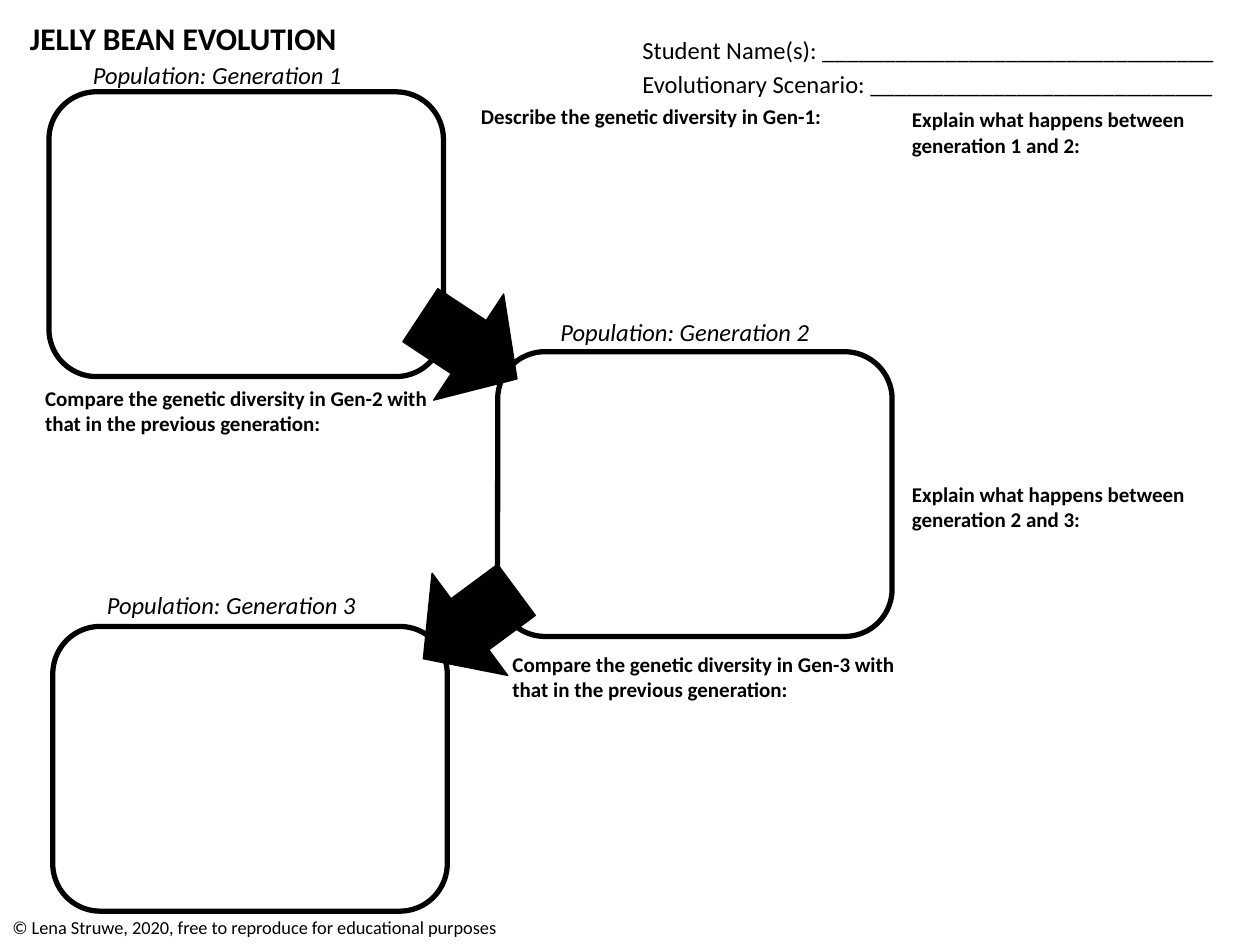
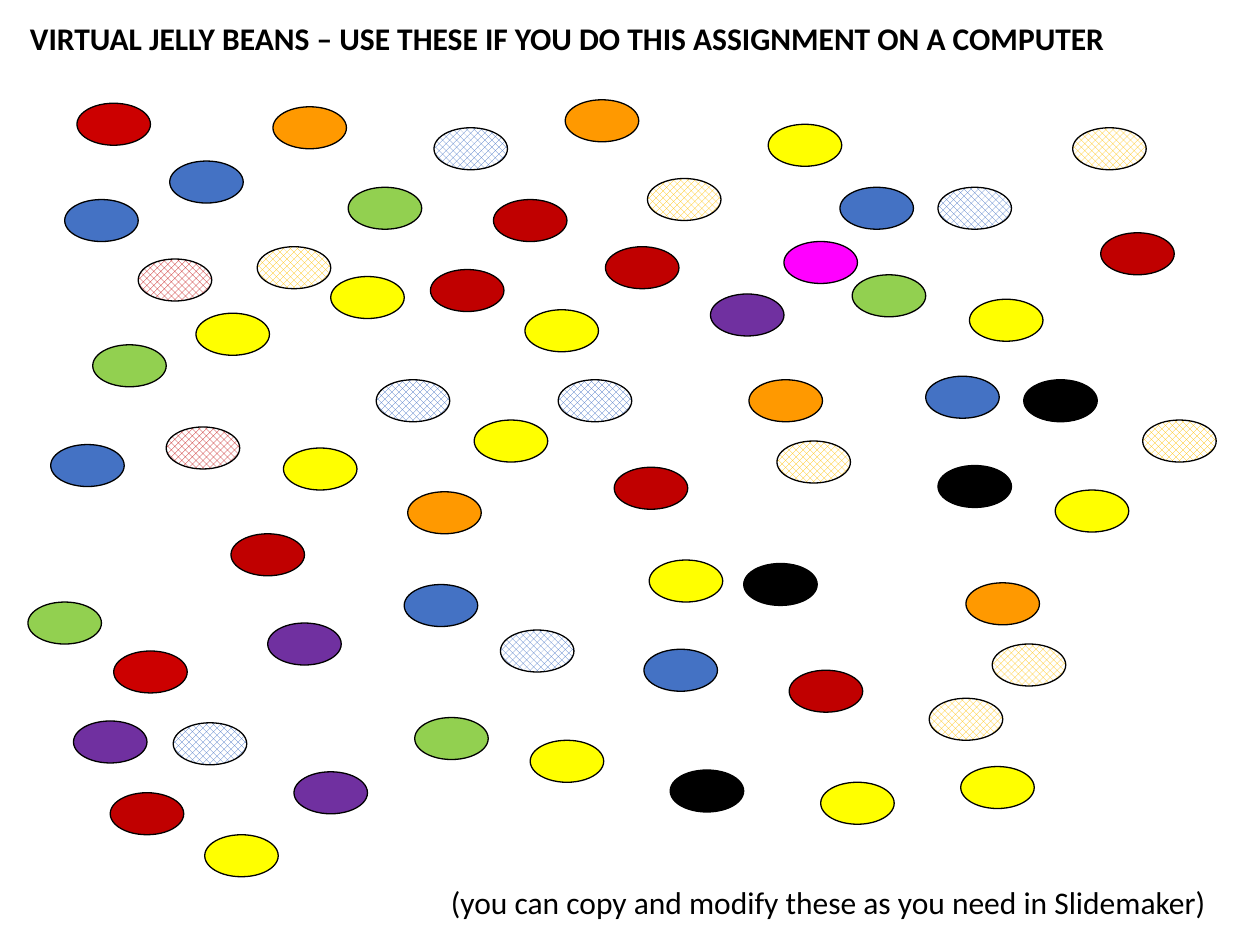
import pptx
import pptx.dml.color
import pptx.enum.dml
import pptx.enum.shapes
import pptx.enum.text
import pptx.util

Pt = pptx.util.Pt
RGBColor = pptx.dml.color.RGBColor
SHAPE = pptx.enum.shapes.MSO_SHAPE

BLACK = RGBColor(0x00, 0x00, 0x00)
WHITE = RGBColor(0xFF, 0xFF, 0xFF)
CHERRY = RGBColor(0xCC, 0x00, 0x00)
RED = RGBColor(0xC0, 0x00, 0x00)
ORANGE = RGBColor(0xFF, 0x99, 0x00)
GOLD = RGBColor(0xFF, 0xC0, 0x00)
YELLOW = RGBColor(0xFF, 0xFF, 0x00)
GREEN = RGBColor(0x92, 0xD0, 0x50)
BLUE = RGBColor(0x44, 0x72, 0xC4)
PURPLE = RGBColor(0x70, 0x30, 0xA0)
PINK = RGBColor(0xFF, 0x00, 0xFF)

FONT = "Calibri"
PAGE_WIDTH, PAGE_HEIGHT = 720, 540
FULL_PAGE = (0, 0, PAGE_WIDTH, PAGE_HEIGHT)
POPULATION_SIZE = (225.4, 162.7)
BEAN_SIZE = (42, 24)

PLAIN_BEANS = [
    (CHERRY, [(44, 59), (65, 372)]),
    (RED, [(629, 133), (351, 267), (346, 141), (63, 453),
           (132, 305), (451, 383), (282, 114), (246, 154)]),
    (ORANGE, [(156, 61), (428, 217), (233, 281), (323, 57), (552, 333)]),
    (BLUE, [(97, 92), (37, 114), (231, 334), (480, 107),
            (529, 215), (368, 371), (29, 254)]),
    (GREEN, [(199, 107), (53, 197), (237, 410), (487, 157), (16, 344)]),
    (YELLOW, [(162, 256), (371, 320), (271, 240), (117, 477), (439, 71),
              (549, 438), (112, 179), (303, 423), (554, 171), (603, 280),
              (469, 447), (300, 177), (189, 158)]),
    (PURPLE, [(168, 441), (42, 412), (153, 356), (406, 168)]),
    (BLACK, [(425, 322), (585, 217), (536, 266), (383, 440)]),
    (PINK, [(448, 138)]),
]
CHECKED_BEANS = [
    (GOLD, [(147, 141), (653, 240), (444, 252), (613, 73),
            (370, 102), (531, 399), (567, 368)]),
    (BLUE, [(319, 217), (99, 413), (286, 360), (536, 107),
            (248, 73), (215, 217)]),
    (RED, [(79, 148), (95, 244)]),
]


def add_text(page, box, text, size, bold=False, italic=False, wrap=False):
    """Place one line or wrapped paragraph of black text in the box."""
    frame = page.shapes.add_textbox(*map(Pt, box)).text_frame
    frame.word_wrap = wrap
    frame.auto_size = pptx.enum.text.MSO_AUTO_SIZE.SHAPE_TO_FIT_TEXT
    span = frame.paragraphs[0].add_run()
    span.text = text
    span.font.name = FONT
    span.font.size = Pt(size)
    span.font.bold = bold
    span.font.italic = italic
    span.font.color.rgb = BLACK


def add_outlined(page, kind, box, color, line_width=0.75, checked=False):
    """Draw a black-outlined shape with a solid or checked fill."""
    shape = page.shapes.add_shape(kind, *map(Pt, box))
    shape.shadow.inherit = False
    if checked:
        shape.fill.patterned()
        shape.fill.pattern = pptx.enum.dml.MSO_PATTERN.LARGE_CHECKER_BOARD
        shape.fill.fore_color.rgb = color
        shape.fill.back_color.rgb = WHITE
    else:
        shape.fill.solid()
        shape.fill.fore_color.rgb = color
    shape.line.color.rgb = BLACK
    shape.line.width = Pt(line_width)
    return shape


def add_page(deck, title, title_width):
    """Add a blank page with the shared title style."""
    page = deck.slides.add_slide(deck.slide_layouts[6])
    add_text(page, (10, 7.2, title_width, 28.8), title, 18, bold=True)
    return page


def add_population(page, box, generation, label_shift):
    """Draw a population frame with its label above the top edge."""
    left, top, width, height = box
    add_outlined(page, SHAPE.ROUNDED_RECTANGLE, box, WHITE, 3)
    shift_x, shift_y = label_shift
    add_text(page, (left + shift_x, top + shift_y, 158.4, 24.2),
             f"Population: Generation {generation}", 14, italic=True)


def add_student_lines(page, box):
    """Write the two fill-in lines of the header."""
    left, top, width, height = box
    lines = ["Student Name(s): " + "_" * 32,
             "Evolutionary Scenario: " + "_" * 28]
    for row, text in enumerate(lines):
        line_box = (left, top + row * height / 2, width, 24.2)
        add_text(page, line_box, text, 14)


def add_questions(page, box):
    """Write the bold questions about diversity and change."""
    left, top, width, height = box
    add_text(page, (left + 267.8, top + 55.4, 211.7, 21.8),
             "Describe the genetic diversity in Gen-1:", 12, bold=True)
    for generation, explain_y, compare_x, compare_y in [
            (2, 57.6, 18.7, 216.7), (3, 271.4, 285.8, 368.6)]:
        add_text(page, (left + 514, top + explain_y, 186.5, 36),
                 "Explain what happens between generation "
                 f"{generation - 1} and {generation}:",
                 12, bold=True, wrap=True)
        add_text(page, (left + compare_x, top + compare_y, 249, 36),
                 f"Compare the genetic diversity in Gen-{generation} "
                 "with that in the previous generation:",
                 12, bold=True, wrap=True)


def add_worksheet(deck):
    """Build the worksheet that follows three generations."""
    page = add_page(deck, "JELLY BEAN EVOLUTION", 195.8)
    populations = [((28, 52.5), (18, -21.5)),
                   ((284.4, 201), (28.8, -23.2)),
                   ((30.2, 358), (23.8, -24.6))]
    for generation, (corner, label_shift) in enumerate(populations, 1):
        add_population(page, corner + POPULATION_SIZE, generation, label_shift)
    for left, top, angle in [(234.7, 162, 33.4), (235.4, 320.4, 143.5)]:
        arrow = add_outlined(page, SHAPE.RIGHT_ARROW,
                             (left, top, 66.2, 72.7), BLACK)
        arrow.rotation = angle
    add_student_lines(page, (360, 16.5, 344.2, 39))
    add_questions(page, FULL_PAGE)
    add_text(page, (0, 520, 296.6, 20),
             "© Lena Struwe, 2020, free to reproduce for educational purposes",
             10.5)


def add_beans(page, box, groups, checked):
    """Scatter the beans of each colour over the box."""
    left, top, width, height = box
    for color, corners in groups:
        for x, y in corners:
            add_outlined(page, SHAPE.OVAL, (left + x, top + y) + BEAN_SIZE,
                         color, checked=checked)


def add_bean_supply(deck):
    """Build the page of loose beans."""
    page = add_page(
        deck,
        "VIRTUAL JELLY BEANS – USE THESE IF YOU DO THIS ASSIGNMENT ON A COMPUTER",
        635)
    add_beans(page, FULL_PAGE, PLAIN_BEANS, False)
    add_beans(page, FULL_PAGE, CHECKED_BEANS, True)
    add_text(page, (250.6, 501.1, 455, 28.8),
             "(you can copy and modify these as you need in Slidemaker)", 18)


def main():
    """Build and save the deck."""
    deck = pptx.Presentation()
    deck.slide_width, deck.slide_height = Pt(PAGE_WIDTH), Pt(PAGE_HEIGHT)
    add_worksheet(deck)
    add_bean_supply(deck)
    deck.save("out.pptx")


if __name__ == "__main__":
    main()
